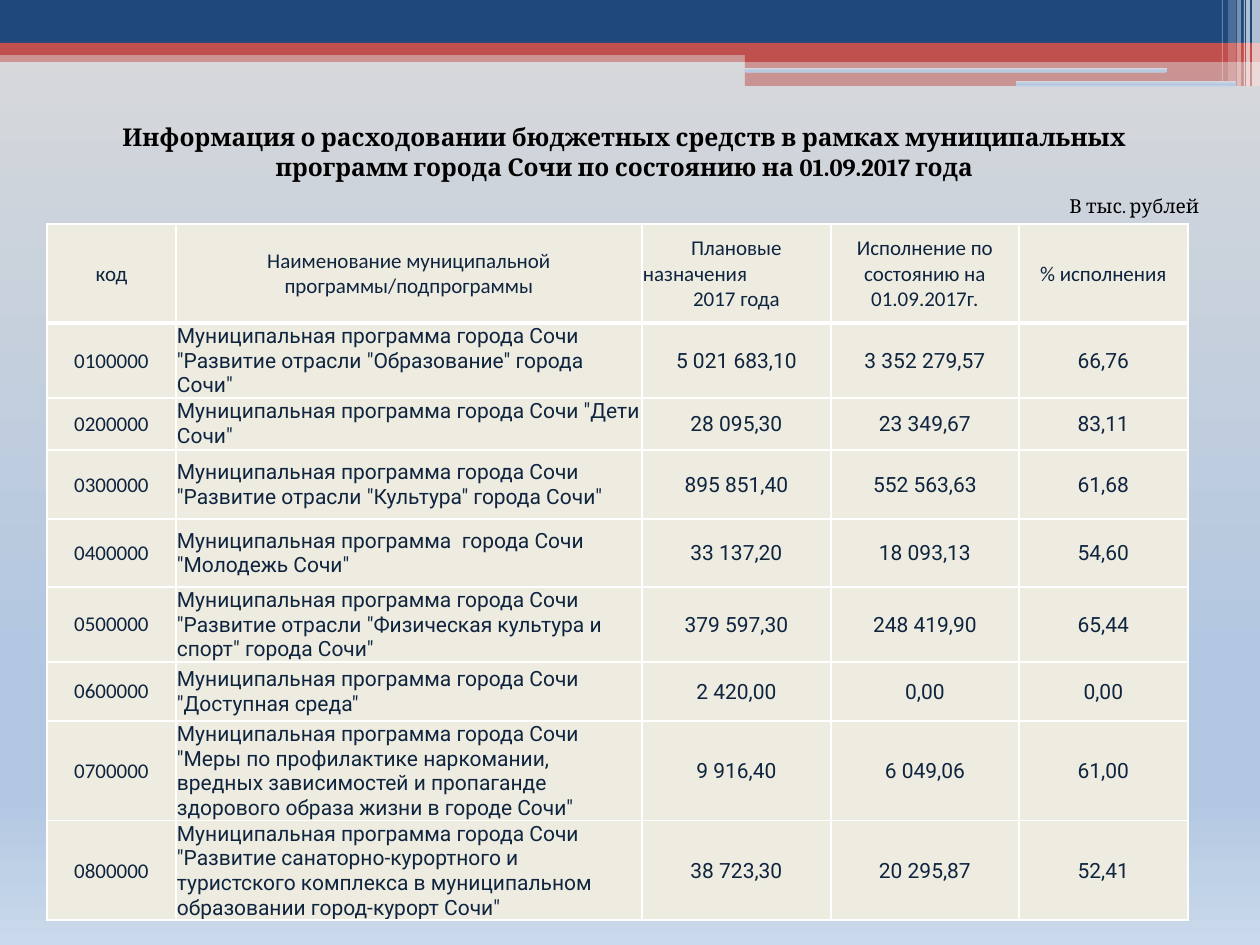
import dataclasses

import lxml.etree
import pptx
import pptx.dml.color
import pptx.enum.shapes
import pptx.enum.text
import pptx.oxml.ns
import pptx.util

PX = 914400 / 126
qn = pptx.oxml.ns.qn
Kind = pptx.enum.shapes.MSO_SHAPE
Align = pptx.enum.text.PP_ALIGN
Anchor = pptx.enum.text.MSO_ANCHOR


@dataclasses.dataclass(frozen=True)
class Theme:
    navy: str = "1F497D"
    red: str = "C0504D"
    white: str = "FFFFFF"
    cream: str = "EEECE1"
    ink: str = "0F243E"
    black: str = "000000"
    wash: tuple = ((0, "D9D9D9"), (74, "B0C6E1"), (83, "B0C6E1"), (100, "CAD9EB"))
    serif: str = "Cambria"
    sans: str = "Calibri"
    body: str = "Roboto"
    head: int = 14
    cell: int = 12
    note: int = 11
    thin: int = 1
    thick: int = 3


T = Theme()

HEADS = [
    "код", "Наименование муниципальной программы/подпрограммы",
    "Плановые\nназначения\n2017 года",
    "Исполнение по состоянию на 01.09.2017г.", "% исполнения",
]
# Programme name, plan, spent, percent
ROWS = [
    ('Муниципальная программа города Сочи "Развитие отрасли "Образование" города Сочи"',
     "5 021 683,10", "3 352 279,57", "66,76"),
    ('Муниципальная программа города Сочи "Дети Сочи"',
     "28 095,30", "23 349,67", "83,11"),
    ('Муниципальная программа города Сочи "Развитие отрасли "Культура" города Сочи"',
     "895 851,40", "552 563,63", "61,68"),
    ('Муниципальная программа  города Сочи "Молодежь Сочи"',
     "33 137,20", "18 093,13", "54,60"),
    ('Муниципальная программа города Сочи "Развитие отрасли "Физическая культура и спорт" города Сочи"',
     "379 597,30", "248 419,90", "65,44"),
    ('Муниципальная программа города Сочи "Доступная среда"',
     "2 420,00", "0,00", "0,00"),
    ('Муниципальная программа города Сочи "Меры по профилактике наркомании, вредных '
     'зависимостей и пропаганде здорового образа жизни в городе Сочи"',
     "9 916,40", "6 049,06", "61,00"),
    ('Муниципальная программа города Сочи "Развитие санаторно-курортного и туристского '
     'комплекса в муниципальном образовании город-курорт Сочи"',
     "38 723,30", "20 295,87", "52,41"),
]
COLS = [129, 466, 189, 188, 169]
TALL = [99, 75, 52, 69, 68, 75, 59, 100, 99]


def px(num):
    return pptx.util.Emu(round(num * PX))


def rgb(code):
    return pptx.dml.color.RGBColor.from_string(code)


def write(para, text, font, size, color, bold=False):
    run = para.add_run()
    run.text = text
    run.font.name = font
    run.font.size = pptx.util.Pt(size)
    run.font.color.rgb = rgb(color)
    run.font.bold = bold


def wash(fill, root):
    """Fill with the pale gradient, top to bottom."""
    fill.gradient()
    fill.gradient_angle = 270
    stops = root.find(".//" + qn("a:gsLst"))
    for old in list(stops):
        stops.remove(old)
    for pos, code in T.wash:
        stop = lxml.etree.SubElement(stops, qn("a:gs"), pos=str(pos * 1000))
        lxml.etree.SubElement(stop, qn("a:srgbClr"), val=code)


def bar(slide, box, color=None, alpha=100):
    """Add a plain bar, or a rounded gradient strip when no colour is given."""
    kind = Kind.RECTANGLE if color else Kind.ROUNDED_RECTANGLE
    shape = slide.shapes.add_shape(kind, *map(px, box))
    shape.shadow.inherit = False
    shape.line.fill.background()
    if not color:
        wash(shape.fill, shape.element)
        return
    shape.fill.solid()
    shape.fill.fore_color.rgb = rgb(color)
    if alpha < 100:
        tint = shape.element.spPr.find(".//" + qn("a:srgbClr"))
        lxml.etree.SubElement(tint, qn("a:alpha"), val=str(alpha * 1000))


def banner(slide, left, top, wide):
    # Full-width bands
    bar(slide, (left, top + 50, wide, 12), T.red, 50)
    bar(slide, (left, top, wide, 43), T.navy)
    bar(slide, (left, top + 43, wide, 12), T.red)
    # Step on the right with its strips
    step = left + 745
    bar(slide, (step, top + 49, wide - 745, 13), T.red)
    bar(slide, (step, top + 61, wide - 745, 25), T.red, 50)
    bar(slide, (step, top + 68, 422, 4))
    bar(slide, (step + 271, top + 81, 220, 5))
    # Upright stripes: gap to the right edge, width, height, opacity
    for gap, thick, tall, alpha in [
        (8, 8, 86, 65), (14, 4, 86, 65), (16, 1, 86, 60),
        (23, 4, 86, 40), (32, 8, 81, 20), (38, 1, 81, 30),
    ]:
        bar(slide, (left + wide - gap, top, thick, tall), T.white, alpha)


def heading(slide, left, top, wide, tall):
    # Title
    title = slide.shapes.title
    title.left, title.top, title.width, title.height = map(px, (left, top, wide, tall))
    frame = title.text_frame
    frame.auto_size = pptx.enum.text.MSO_AUTO_SIZE.NONE
    frame.vertical_anchor = Anchor.TOP
    para = frame.paragraphs[0]
    para.alignment = Align.CENTER
    write(para, "Информация о расходовании бюджетных средств в рамках муниципальных "
          "программ города Сочи по состоянию на 01.09.2017 года",
          T.serif, T.head, T.black, True)
    # Unit note
    note = slide.shapes.add_textbox(*map(px, (left + 993, top + tall, 198, 36)))
    note.text_frame.word_wrap = True
    write(note.text_frame.paragraphs[0], "В тыс. рублей", T.serif, T.note, T.black)


def edge(cell, side, width):
    line = lxml.etree.SubElement(cell._tc.get_or_add_tcPr(), qn("a:ln" + side),
                                 w=str(pptx.util.Pt(width)))
    fill = lxml.etree.SubElement(line, qn("a:solidFill"))
    lxml.etree.SubElement(fill, qn("a:srgbClr"), val=T.white)


def dress(cell, row, col, text):
    """Format one cell and write its lines."""
    for side in "LRTB":
        heavy = (row, side) in ((0, "B"), (1, "T"))
        edge(cell, side, T.thick if heavy else T.thin)
    cell.fill.solid()
    cell.fill.fore_color.rgb = rgb(T.cream)
    cell.margin_left = cell.margin_right = cell.margin_top = px(1)
    cell.margin_bottom = 0
    cell.vertical_anchor = Anchor.TOP if (row, col) == (2, 1) else Anchor.MIDDLE
    font = T.sans if row == 0 or col == 0 else T.body
    frame = cell.text_frame
    for spot, line in enumerate(text.split("\n")):
        para = frame.add_paragraph() if spot else frame.paragraphs[0]
        flush = spot == 1 or (row and col == 1)
        para.alignment = Align.LEFT if flush else Align.CENTER
        write(para, line, font, T.cell, T.ink)


def grid(slide, left, top):
    data = [HEADS] + [(f"0{num}00000", *row) for num, row in enumerate(ROWS, 1)]
    box = map(px, (left, top, sum(COLS), sum(TALL)))
    table = slide.shapes.add_table(len(data), len(COLS), *box).table
    table.first_row = table.horz_banding = False
    for col, wide in zip(table.columns, COLS):
        col.width = px(wide)
    for row, tall in zip(table.rows, TALL):
        row.height = px(tall)
    for row, texts in enumerate(data):
        for col, text in enumerate(texts):
            dress(table.cell(row, col), row, col, text)


def main():
    deck = pptx.Presentation()
    deck.slide_width, deck.slide_height = px(1260), px(945)
    slide = deck.slides.add_slide(deck.slide_layouts[5])
    wash(slide.background.fill, slide.element)
    banner(slide, 0, 0, 1260)
    grid(slide, 47, 224)
    heading(slide, 64, 116, 1121, 72)
    deck.save("out.pptx")


if __name__ == "__main__":
    main()
